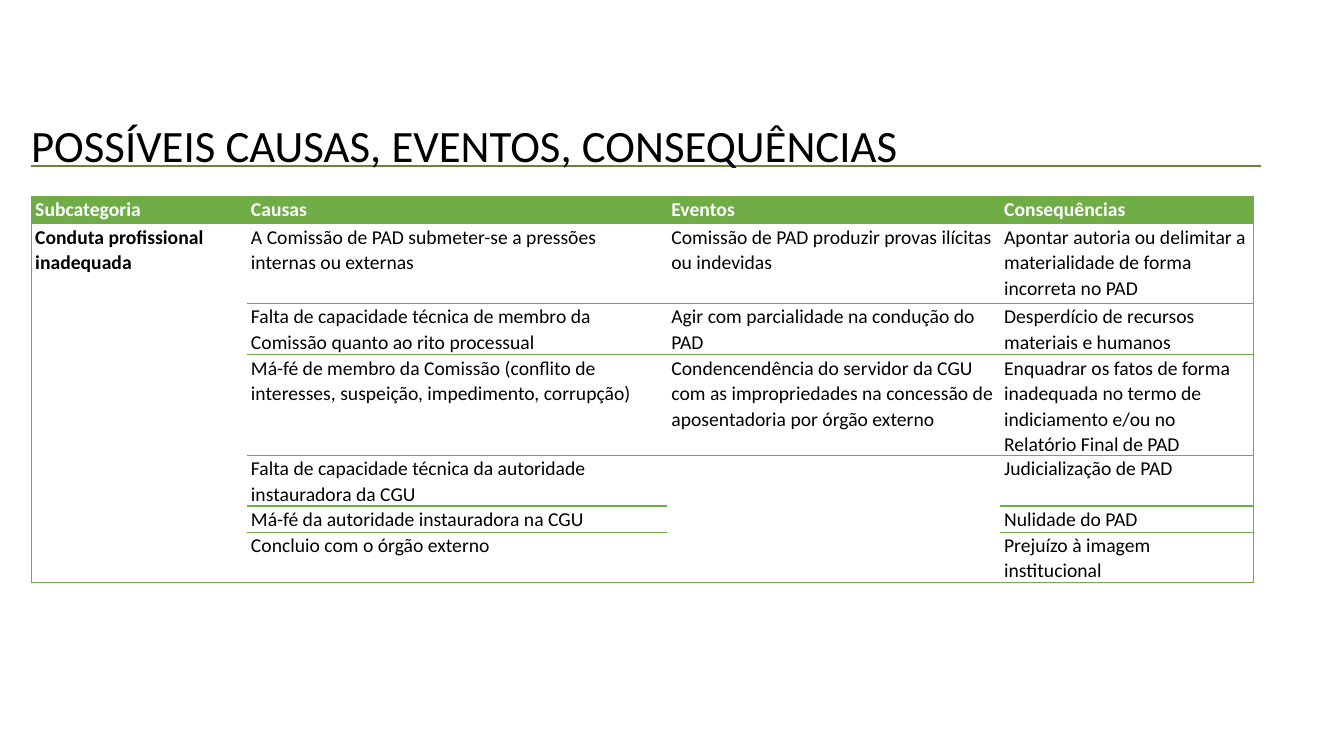
import lxml.etree
import pptx
import pptx.dml.color
import pptx.enum.shapes
import pptx.oxml.ns
import pptx.util

PX = 9144
COLORS = {"green": "70AD47", "rule": "678A26", "black": "000000", "white": "FFFFFF"}
COLUMNS = [214, 417, 330, 251]
ROWS = [27, 79, 51, 100, 50, 26, 50]
CELLS = [
    ["Subcategoria", "Causas", "Eventos", "Consequências"],
    ["Conduta profissional inadequada",
     "A Comissão de PAD submeter-se a pressões internas ou externas",
     "Comissão de PAD produzir provas ilícitas ou indevidas",
     "Apontar autoria ou delimitar a materialidade de forma incorreta no PAD"],
    ["", "Falta de capacidade técnica de membro da Comissão quanto ao rito processual",
     "Agir com parcialidade na condução do PAD",
     "Desperdício de recursos materiais e humanos"],
    ["", "Má-fé de membro da Comissão (conflito de interesses, suspeição, impedimento, corrupção)",
     "Condencendência do servidor da CGU com as impropriedades na concessão de aposentadoria por órgão externo",
     "Enquadrar os fatos de forma inadequada no termo de indiciamento e/ou no Relatório Final de PAD"],
    ["", "Falta de capacidade técnica da autoridade instauradora da CGU", "",
     "Judicialização de PAD"],
    ["", "Má-fé da autoridade instauradora na CGU", "", "Nulidade do PAD"],
    ["", "Concluio com o órgão externo", "", "Prejuízo à imagem institucional"],
]
MERGES = [((1, 0), (6, 0)), ((4, 2), (6, 2))]


def px(n):
    return pptx.util.Emu(n * PX)


def rgb(name):
    return pptx.dml.color.RGBColor.from_string(COLORS[name])


def write(tf, text, size=14, color="black", bold=False, spacing=None):
    p = tf.paragraphs[0]
    p.line_spacing = spacing
    r = p.add_run()
    r.text = text
    r.font.name = "Calibri"
    r.font.size = pptx.util.Pt(size)
    r.font.bold = bold
    r.font.color.rgb = rgb(color)


class Deck:
    """Holds the presentation, its current slide and the shared style."""

    def __init__(self, width, height):
        self.prs = pptx.Presentation()
        self.prs.slide_width = px(width)
        self.prs.slide_height = px(height)
        self.s = self.prs.slides.add_slide(self.prs.slide_layouts[6])

    def line(self, x1, y1, x2, y2, color, width):
        c = self.s.shapes.add_connector(
            pptx.enum.shapes.MSO_CONNECTOR.STRAIGHT, px(x1), px(y1), px(x2), px(y2))
        c.line.color.rgb = rgb(color)
        c.line.width = pptx.util.Pt(width)
        lxml.etree.SubElement(c._element.spPr, pptx.oxml.ns.qn("a:effectLst"))

    def text(self, x, y, w, h, text, **style):
        tf = self.s.shapes.add_textbox(px(x), px(y), px(w), px(h)).text_frame
        tf.word_wrap = True
        write(tf, text, **style)

    def borders(self, cell, sides):
        tcPr = cell._tc.get_or_add_tcPr()
        for side in "LRTB":
            ln = lxml.etree.SubElement(tcPr, pptx.oxml.ns.qn(f"a:ln{side}"), w="12700")
            if side in sides:
                fill = lxml.etree.SubElement(ln, pptx.oxml.ns.qn("a:solidFill"))
                lxml.etree.SubElement(fill, pptx.oxml.ns.qn("a:srgbClr"), val=COLORS["green"])
            else:
                lxml.etree.SubElement(ln, pptx.oxml.ns.qn("a:noFill"))

    def table(self, x, y, columns, rows, texts, merges):
        table = self.s.shapes.add_table(
            len(rows), len(columns), px(x), px(y), px(sum(columns)), px(sum(rows))).table
        table.first_row = table.horz_banding = False
        for column, width in zip(table.columns, columns):
            column.width = px(width)
        for row, height in zip(table.rows, rows):
            row.height = px(height)
        for first, last in merges:
            table.cell(*first).merge(table.cell(*last))
        for i, row in enumerate(texts):
            for j, text in enumerate(row):
                cell = table.cell(i, j)
                cell.margin_left = cell.margin_right = px(4)
                cell.margin_top = cell.margin_bottom = 0
                sides = "" if cell.is_spanned else "TB"
                sides += "B" if i == len(rows) - 1 else ""
                sides += "L" if j == 0 else "R" if j == len(columns) - 1 else ""
                self.borders(cell, sides)
                cell.fill.solid()
                cell.fill.fore_color.rgb = rgb("white" if i else "green")
                if text:
                    write(cell.text_frame, text, color="black" if i else "white",
                          bold=i == 0 or j == 0, spacing=1.07)


def main():
    deck = Deck(1333, 750)
    deck.line(31, 165, 1251, 165, "rule", 1.5)
    deck.text(21, 112, 1221, 64, "POSSÍVEIS CAUSAS, EVENTOS, CONSEQUÊNCIAS", size=32)
    deck.table(31, 195, COLUMNS, ROWS, CELLS, MERGES)
    deck.prs.save("out.pptx")


if __name__ == "__main__":
    main()
